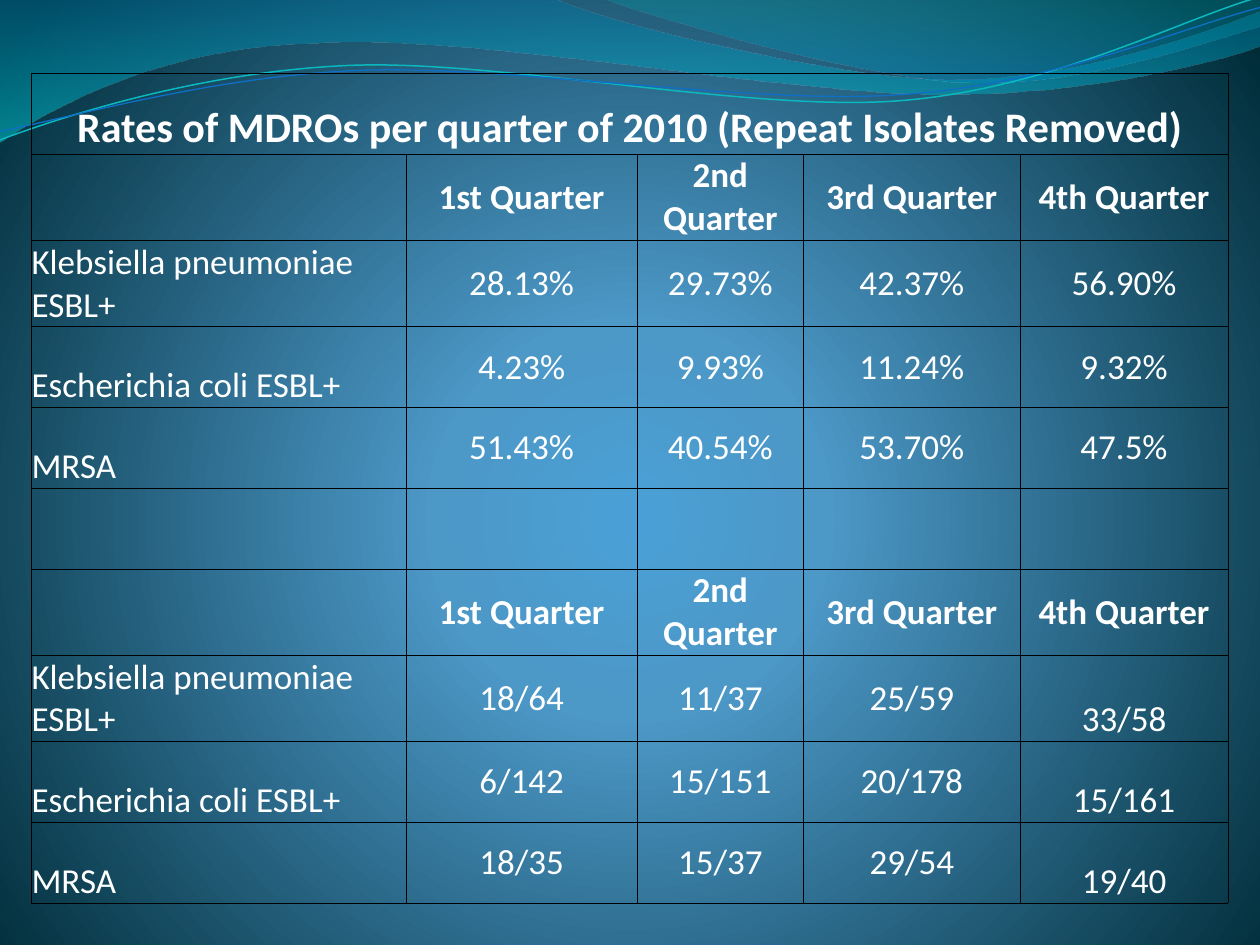
from dataclasses import dataclass
from math import cos, radians, sin
from typing import Optional

from lxml.etree import SubElement
from pptx import Presentation
from pptx.dml.color import RGBColor
from pptx.enum.text import MSO_ANCHOR as Anchor, PP_ALIGN as Align
from pptx.oxml import parse_xml
from pptx.oxml.ns import nsdecls, qn
from pptx.util import Pt


@dataclass
class Stop:
    position: int
    color: str
    opacity: int = 100


@dataclass
class Wave:
    start: tuple
    segments: list
    stops: Optional[list] = None
    line_color: str = ""
    line_width: float = 0
    rotation: float = 0


LINEAR_DOWN = '<a:lin ang="5400000" scaled="1"/>'
CENTER_GLOW = ('<a:path path="circle"><a:fillToRect l="10000" t="110000" '
               'r="10000" b="100000"/></a:path>')
BACKGROUND = [Stop(0, "4AA0D6"), Stop(25, "4C98C7"), Stop(100, "002C38")]
RIBBON_CENTER = (359.5, 41.6)
RIBBON_TILT = 357.3

WAVES = [
    Wave((0, 0), [
        (316.8, -0.7),
        (342.7, 12.2, 478.1, 45.4, 545.8, 45.4),
        (614.2, 45.4, 689.8, 18.7, 720, 6.5),
        (720.7, 25.9),
        (707.8, 31.7, 626.4, 54.7, 537.1, 54),
        (447.8, 54, 275, 20.2, 185, 24.5),
        (92.9, 25.9, 33.1, 59.8, -0.7, 81.4),
        (0, 0),
    ], [Stop(0, "0074A1", 45), Stop(100, "00C6CF", 55)]),
    Wave((344.9, -0.7), [
        (366.5, 7.9, 491, 44.6, 553.7, 46.8),
        (616.3, 49.7, 691.9, 23, 720, 15.1),
        (720, 0),
        (344.9, -0.7),
    ], [Stop(0, "00A1A9", 30), Stop(100, "008BBF", 45)]),
    Wave((0, 79.9), [
        (34.6, 67, 113.8, 41, 199.4, 37.4),
        (284.4, 33.8, 427, 64.1, 513.4, 57.6),
        (599.8, 51.1, 675.4, 10.8, 718.6, -1.4),
    ], line_color="0AB8BF", line_width=0.85, rotation=RIBBON_TILT),
    Wave((0, 74.9), [
        (33.8, 69.1, 118.1, 43.9, 203.8, 40.3),
        (290.2, 36.7, 429.8, 60.5, 516.2, 54),
        (601.9, 48.2, 677.5, 15.1, 720, 4.3),
    ], line_color="0F6FC6", line_width=0.75, rotation=RIBBON_TILT),
]

TITLE = "Rates of MDROs per quarter of 2010 (Repeat Isolates Removed)"
QUARTERS = ["", "1st Quarter", "2nd Quarter", "3rd Quarter", "4th Quarter"]
ORGANISMS = ["Klebsiella pneumoniae ESBL+", "Escherichia coli ESBL+", "MRSA"]
RATES = [
    ["28.13%", "29.73%", "42.37%", "56.90%"],
    ["4.23%", "9.93%", "11.24%", "9.32%"],
    ["51.43%", "40.54%", "53.70%", "47.5%"],
]
COUNTS = [
    ["18/64", "11/37", "25/59", "33/58"],
    ["6/142", "15/151", "20/178", "15/161"],
    ["18/35", "15/37", "29/54", "19/40"],
]
COLUMN_WIDTHS = [214, 132.2, 95, 123.8, 118.8]
SHORT_ROW, TALL_ROW = 46.2, 49.25
TALL_ROWS = {1, 2, 6, 7}
HEADER_ROWS = {0, 1, 6}
FIRST_COUNT_ROW = 7


def rgb(color: str) -> RGBColor:
    return RGBColor.from_string(color)


def set_gradient(holder, stops: list, direction: str) -> None:
    marks = ""
    for stop in stops:
        alpha = f'<a:alpha val="{stop.opacity * 1000}"/>' if stop.opacity < 100 else ""
        marks += (f'<a:gs pos="{stop.position * 1000}">'
                  f'<a:srgbClr val="{stop.color}">{alpha}</a:srgbClr></a:gs>')
    gradient = parse_xml(f'<a:gradFill {nsdecls("a")} rotWithShape="1">'
                         f'<a:gsLst>{marks}</a:gsLst>{direction}</a:gradFill>')
    holder.replace(holder.find(qn("a:noFill")), gradient)


def level(x: float, y: float, rotation: float) -> tuple:
    if not rotation:
        return Pt(x), Pt(y)
    cx, cy = RIBBON_CENTER
    angle = radians(-rotation)
    dx, dy = x - cx, y - cy
    return (Pt(cx + dx * cos(angle) - dy * sin(angle)),
            Pt(cy + dx * sin(angle) + dy * cos(angle)))


def curve_segments(sp, segments: list) -> None:
    lines = iter(sp._element.spPr.findall(f".//{qn('a:lnTo')}"))
    for segment in segments:
        first = next(lines)
        if len(segment) == 2:
            continue
        outline = first.getparent()
        curve = SubElement(outline, qn("a:cubicBezTo"))
        first.addprevious(curve)
        for line in (first, next(lines), next(lines)):
            curve.append(line[0])
            outline.remove(line)


def draw_wave(s, wave: Wave) -> None:
    points = [level(*segment[i:i + 2], wave.rotation)
              for segment in wave.segments for i in range(0, len(segment), 2)]
    builder = s.shapes.build_freeform(*level(*wave.start, wave.rotation))
    builder.add_line_segments(points, close=bool(wave.stops))
    sp = builder.convert_to_shape()
    curve_segments(sp, wave.segments)
    sp.rotation = wave.rotation
    sp.shadow.inherit = False
    sp.fill.background()
    if wave.stops:
        set_gradient(sp._element.spPr, wave.stops, LINEAR_DOWN)
        sp.line.fill.background()
    else:
        sp.line.color.rgb = rgb(wave.line_color)
        sp.line.width = Pt(wave.line_width)


def set_borders(cell, color: str, width: float) -> None:
    properties = cell._tc.get_or_add_tcPr()
    for position, side in enumerate(("lnL", "lnR", "lnT", "lnB")):
        border = SubElement(properties, qn(f"a:{side}"), w=str(Pt(width)))
        fill = SubElement(border, qn("a:solidFill"))
        SubElement(fill, qn("a:srgbClr"), val=color)
        properties.insert(position, border)


def write_cell(cell, text: str, align, anchor, size: float, bold: bool) -> None:
    cell.vertical_anchor = anchor
    p = cell.text_frame.paragraphs[0]
    p.alignment = align
    r = p.add_run()
    r.text = text
    for name, value in {"name": "Calibri", "size": Pt(size), "bold": bold}.items():
        setattr(r.font, name, value)
    r.font.color.rgb = rgb("FFFFFF")


def draw_table(s) -> None:
    rows = [[TITLE], QUARTERS]
    rows += [[name, *values] for name, values in zip(ORGANISMS, RATES)]
    rows += [[], QUARTERS]
    rows += [[name, *values] for name, values in zip(ORGANISMS, COUNTS)]
    heights = [TALL_ROW if i in TALL_ROWS else SHORT_ROW for i in range(len(rows))]
    last_column = len(COLUMN_WIDTHS) - 1
    table = s.shapes.add_table(len(rows), len(COLUMN_WIDTHS), Pt(18), Pt(42),
                               Pt(sum(COLUMN_WIDTHS)), Pt(sum(heights))).table
    table.first_row = table.horz_banding = False
    for column, width in zip(table.columns, COLUMN_WIDTHS):
        column.width = Pt(width)
    for row, height in zip(table.rows, heights):
        row.height = Pt(height)
    for cell in table.iter_cells():
        for side in ("left", "right", "top", "bottom"):
            setattr(cell, f"margin_{side}", 0)
        cell.fill.background()
        set_borders(cell, "000000", 0.5)
    table.cell(0, 0).merge(table.cell(0, last_column))
    for i, texts in enumerate(rows):
        for j, text in enumerate(texts):
            if not text:
                continue
            at_bottom = i == 0 or j == 0 or (j == last_column and i >= FIRST_COUNT_ROW)
            write_cell(table.cell(i, j), text,
                       Align.LEFT if j == 0 and i > 0 else Align.CENTER,
                       Anchor.BOTTOM if at_bottom else Anchor.MIDDLE,
                       24 if i == 0 else 20, i in HEADER_ROWS)


def main() -> None:
    prs = Presentation()
    prs.slide_width, prs.slide_height = Pt(720), Pt(540)
    s = prs.slides.add_slide(prs.slide_layouts[6])
    s.background.fill.background()
    set_gradient(s._element.cSld.bg.bgPr, BACKGROUND, CENTER_GLOW)
    for wave in WAVES:
        draw_wave(s, wave)
    draw_table(s)
    prs.save("out.pptx")


if __name__ == "__main__":
    main()
